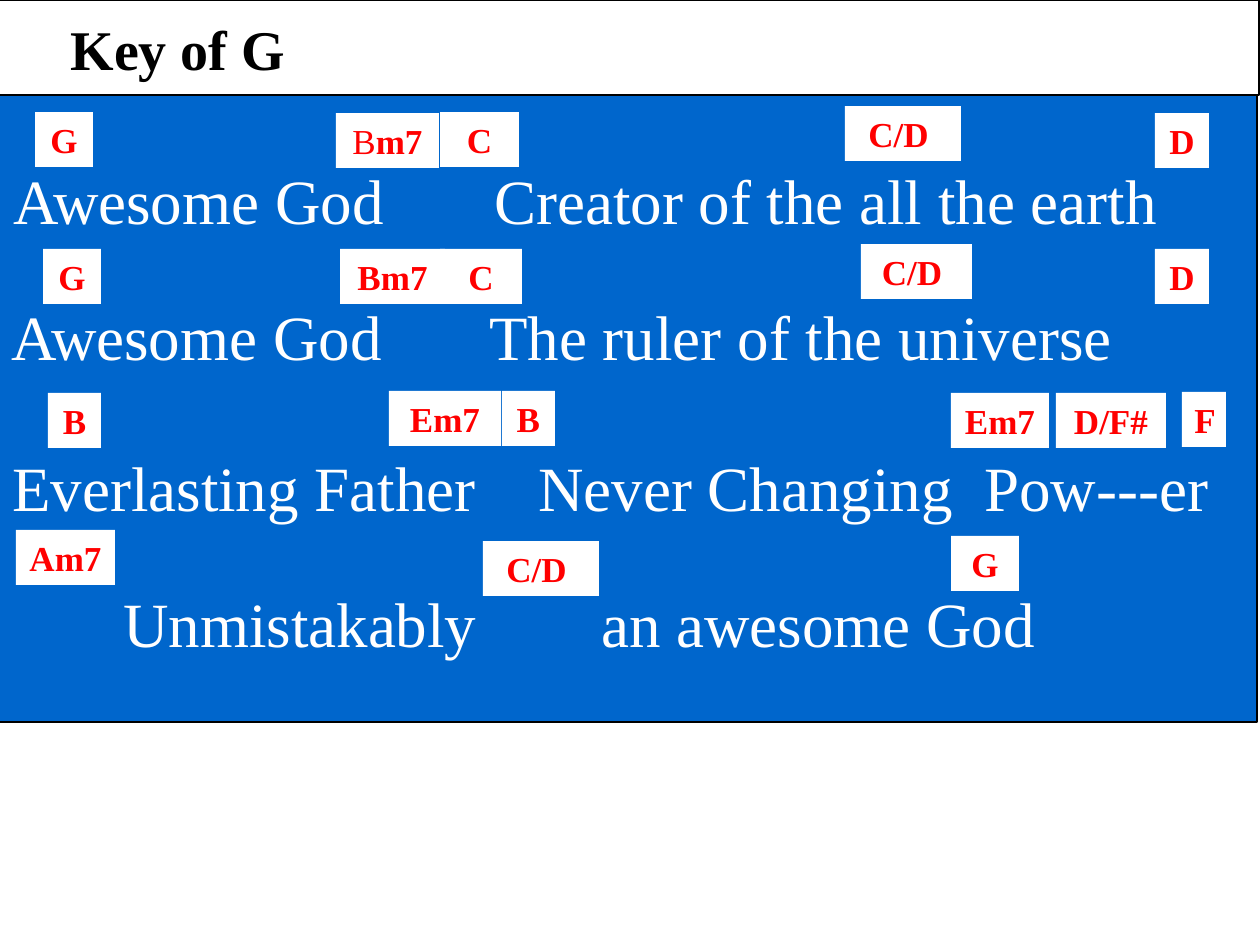
from lxml import etree
from pptx import Presentation
from pptx import util as u
from pptx.dml.color import RGBColor
from pptx.enum import shapes, text
from pptx.oxml.ns import qn

SCALE = 914400 // 126
FONT = "Times New Roman"
COLORS = {"paper": "FFFFFF", "panel": "0066CC", "ink": "000000", "chord": "FF0000"}
CHORD_HEIGHT = 55

VERSE = [
    (3, 60, "Awesome God\tCreator of the all the earth", [481], [
        (37, -43, 58, ["G"]), (338, -42, 103, ["B", "m7"]), (442, -43, 79, ["C"]),
        (847, -49, 116, ["C/D "]), (1157, -42, 54, ["D"])]),
    (1, 196, "Awesome God\tThe ruler of the universe", [478], [
        (45, -42, 58, ["G"]), (342, -42, 105, ["Bm7"]), (442, -42, 82, ["C"]),
        (863, -47, 111, ["C/D "]), (1157, -42, 54, ["D"])]),
    (2, 347, "Everlasting Father\tNever Changing\tPow---er", [526, 972], [
        (50, -49, 53, ["B"]), (391, -51, 112, ["Em7"]), (504, -51, 53, ["B"]),
        (953, -49, 98, ["Em7"]), (1058, -49, 110, ["D/F#"]), (1184, -50, 44, ["F"])]),
    (3, 483, "\tUnmistakably\tan awesome God", [110, 588], [
        (18, -48, 99, ["Am7"]), (485, -37, 116, ["C/D "]), (953, -42, 68, ["G"])]),
]


def px(*lengths):
    return [u.Emu(length * SCALE) for length in lengths]


def color(name):
    return RGBColor.from_string(COLORS[name])


def add_rect(slide, box, fill, outline=None):
    rect = slide.shapes.add_shape(shapes.MSO_SHAPE.RECTANGLE, *px(*box))
    rect.shadow.inherit = False
    rect.fill.solid()
    rect.fill.fore_color.rgb = color(fill)
    if outline:
        rect.line.color.rgb = color(outline)
        rect.line.width = u.Pt(0.75)
    else:
        rect.line.fill.background()
    return rect


def write(holder, parts, size, ink, align, bold=(), stops=()):
    frame = holder.text_frame
    frame.word_wrap = True
    frame.auto_size = text.MSO_AUTO_SIZE.SHAPE_TO_FIT_TEXT
    frame.vertical_anchor = text.MSO_ANCHOR.TOP
    paragraph = frame.paragraphs[0]
    paragraph.alignment = align
    properties = paragraph._p.get_or_add_pPr()
    before = etree.SubElement(properties, qn("a:spcBef"))
    etree.SubElement(before, qn("a:spcPct"), val="50000")
    if stops:
        tabs = etree.SubElement(properties, qn("a:tabLst"))
        for stop in px(*stops):
            etree.SubElement(tabs, qn("a:tab"), pos=str(stop), algn="l")
    for index, part in enumerate(parts):
        run = paragraph.add_run()
        run.text = part
        run.font.name = FONT
        run.font.size = u.Pt(size)
        run.font.bold = index in bold
        run.font.color.rgb = color(ink)


def add_header(slide, box):
    left, top, width, height = box
    add_rect(slide, box, "paper", "ink")
    key = add_rect(slide, (left + 18, top + 8, 324, 81), "paper")
    write(key, ["Key of G"], 32, "ink", text.PP_ALIGN.CENTER, bold=[0])


def add_lyric(slide, box, words, stops):
    lyric = slide.shapes.add_textbox(*px(*box))
    write(lyric, [words], 36, "paper", text.PP_ALIGN.LEFT, stops=stops)


def add_chord(slide, box, parts):
    chord = add_rect(slide, box, "paper")
    write(chord, parts, 20, "chord", text.PP_ALIGN.CENTER, bold=[len(parts) - 1])


def add_verse(slide, box):
    left, top, width, height = box
    add_rect(slide, box, "panel", "ink")
    for x, y, words, stops, chords in VERSE:
        add_lyric(slide, (left + x, top + y, 1260, 89), words, stops)
        for chord_x, rise, chord_width, parts in chords:
            place = (left + chord_x, top + y + rise, chord_width, CHORD_HEIGHT)
            add_chord(slide, place, parts)


def main():
    deck = Presentation()
    deck.slide_width, deck.slide_height = px(1260, 945)
    slide = deck.slides.add_slide(deck.slide_layouts[6])
    slide.background.fill.solid()
    slide.background.fill.fore_color.rgb = color("paper")
    add_header(slide, (-2, 0, 1261, 95))
    add_verse(slide, (-2, 95, 1259, 627))
    deck.save("out.pptx")


if __name__ == "__main__":
    main()
